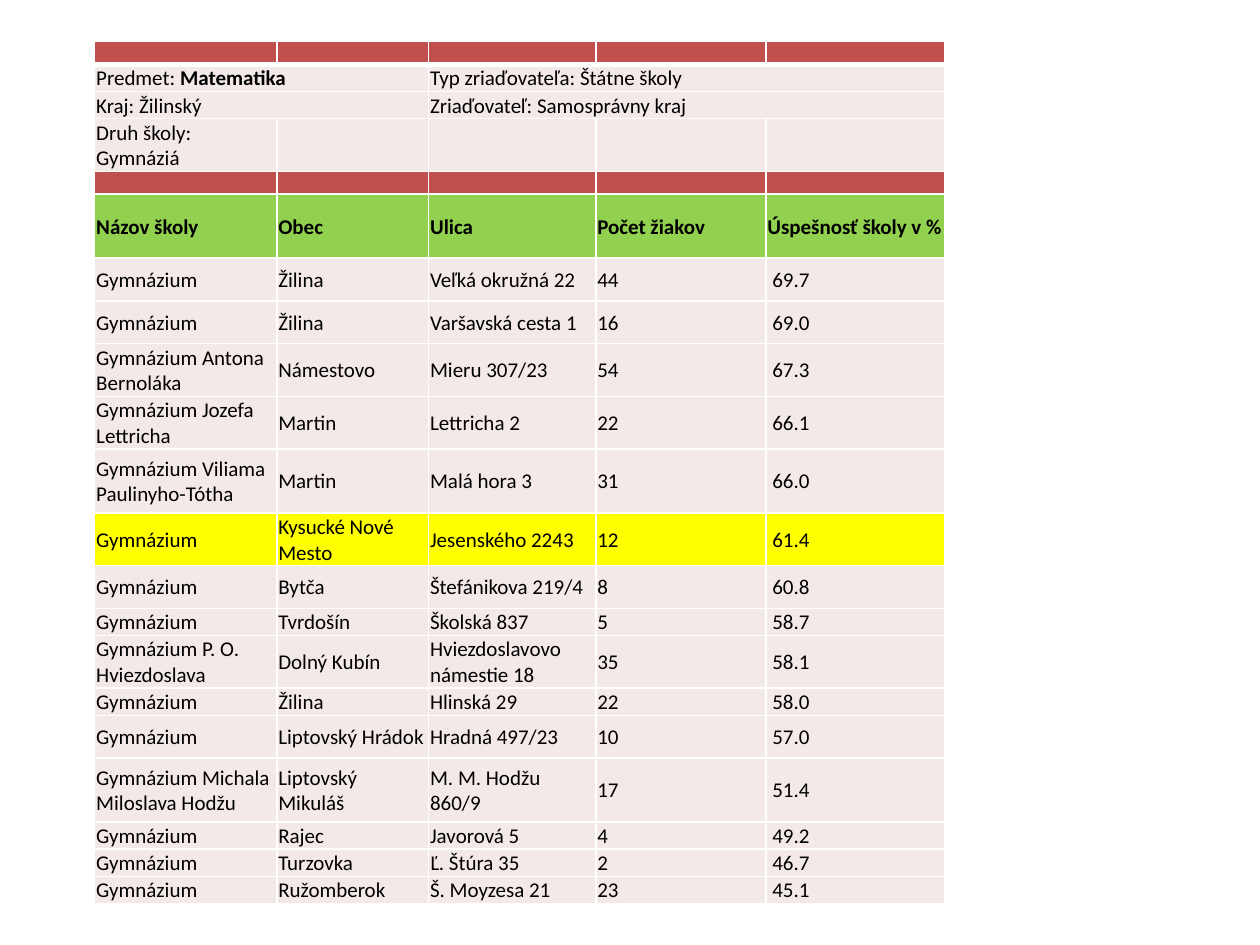
from lxml import etree
from pptx import Presentation
from pptx.dml.color import RGBColor
from pptx.enum.text import MSO_ANCHOR
from pptx.oxml.ns import qn
from pptx.util import Cm, Pt

TOP, MID, LOW = MSO_ANCHOR.TOP, MSO_ANCHOR.MIDDLE, MSO_ANCHOR.BOTTOM
RED = RGBColor(0xC0, 0x50, 0x4D)
PINK = RGBColor(0xF4, 0xE9, 0xE9)
GREEN = RGBColor(0x92, 0xD0, 0x50)
YELLOW = RGBColor(0xFF, 0xFF, 0x00)
WHITE = RGBColor(0xFF, 0xFF, 0xFF)
BLACK = RGBColor(0x00, 0x00, 0x00)

FONT = {"name": "Calibri", "size": Pt(12), "bold": False}
PAD = {"margin_left": Cm(0.03), "margin_top": Cm(0.03),
       "margin_right": Cm(0.03), "margin_bottom": 0}
RATE_PAD = {"margin_left": Cm(0.13)}

# Row heights are multiples of one text line
LINE = 0.43
BOX = (1.91, 0.84, 17.14)
COLS = (3.67, 3.06, 3.37, 3.43, 3.61)

HEAD = ("Názov školy", "Obec", "Ulica", "Počet žiakov", "Úspešnosť školy v %")
# Lines in the row, then the cells
SCHOOLS = (
    (2, "Gymnázium", "Žilina", "Veľká okružná 22", "44", "69.7"),
    (2, "Gymnázium", "Žilina", "Varšavská cesta 1", "16", "69.0"),
    (2, "Gymnázium Antona Bernoláka", "Námestovo", "Mieru 307/23", "54", "67.3"),
    (2, "Gymnázium Jozefa Lettricha", "Martin", "Lettricha 2", "22", "66.1"),
    (3, "Gymnázium Viliama Paulinyho-Tótha", "Martin", "Malá hora 3", "31", "66.0"),
    (2, "Gymnázium", "Kysucké Nové Mesto", "Jesenského 2243", "12", "61.4"),
    (2, "Gymnázium", "Bytča", "Štefánikova 219/4", "8", "60.8"),
    (1, "Gymnázium", "Tvrdošín", "Školská 837", "5", "58.7"),
    (2, "Gymnázium P. O. Hviezdoslava", "Dolný Kubín",
     "Hviezdoslavovo námestie 18", "35", "58.1"),
    (1, "Gymnázium", "Žilina", "Hlinská 29", "22", "58.0"),
    (2, "Gymnázium", "Liptovský Hrádok", "Hradná 497/23", "10", "57.0"),
    (3, "Gymnázium Michala Miloslava Hodžu", "Liptovský Mikuláš",
     "M. M. Hodžu 860/9", "17", "51.4"),
    (1, "Gymnázium", "Rajec", "Javorová 5", "4", "49.2"),
    (1, "Gymnázium", "Turzovka", "Ľ. Štúra 35", "2", "46.7"),
    (1, "Gymnázium", "Ružomberok", "Š. Moyzesa 21", "23", "45.1"),
)
MARKED = "Kysucké Nové Mesto"
HEAD_ROW = 5
LINES = (1,) * HEAD_ROW + (3,) + tuple(row[0] for row in SCHOOLS)


def style(item, *formats):
    for values in formats:
        for key, value in values.items():
            setattr(item, key, value)


def write(cell, text, anchor=MID, bold=False):
    cell.vertical_anchor = anchor
    run = cell.text_frame.paragraphs[0].add_run()
    run.text = text
    style(run.font, FONT, {"bold": bold})
    run.font.color.rgb = BLACK


def edge(cell, **widths):
    props = cell._tc.get_or_add_tcPr()
    for side in "LRTB":
        line = etree.SubElement(props, qn("a:ln" + side),
                                w=str(Pt(widths.get(side, 1))))
        fill = etree.SubElement(line, qn("a:solidFill"))
        etree.SubElement(fill, qn("a:srgbClr"), val=str(WHITE))


def paint(cell, color):
    cell.fill.solid()
    cell.fill.fore_color.rgb = color


def grid(slide, left, top, width):
    """Add the table with white rules and pink cells."""
    table = slide.shapes.add_table(
        len(LINES), len(COLS), Cm(left), Cm(top), Cm(width),
        Cm(LINE * sum(LINES))).table
    for col, size in zip(table.columns, COLS):
        col.width = Cm(size)
    for i, (row, count) in enumerate(zip(table.rows, LINES)):
        row.height = Cm(LINE * count)
        for cell in row.cells:
            style(cell, PAD)
            edge(cell, T=3 if i == 1 else 1, B=3 if i == 0 else 1)
            paint(cell, PINK)
            # Small end marks keep empty cells within one line
            mark = cell.text_frame.paragraphs[0]._p.get_or_add_endParaRPr()
            mark.set("sz", "1000")
    return table


def details(table):
    """Fill the block between the two red bands."""
    for row in (0, HEAD_ROW - 1):
        for col in range(len(COLS)):
            paint(table.cell(row, col), RED)
    for row in (1, 2):
        table.cell(row, 0).merge(table.cell(row, 1))
        table.cell(row, 2).merge(table.cell(row, 4))
    topic = table.cell(1, 0)
    write(topic, "Predmet: ", TOP)
    write(topic, "Matematika", TOP, bold=True)
    write(table.cell(1, 2), "Typ zriaďovateľa: Štátne školy", LOW)
    write(table.cell(2, 0), "Kraj: Žilinský", TOP)
    write(table.cell(2, 2), "Zriaďovateľ: Samosprávny kraj", LOW)
    write(table.cell(3, 0), "Druh školy: Gymnáziá", TOP)


def schools(table):
    """Fill the heading row and the ranked schools."""
    for col, text in enumerate(HEAD):
        cell = table.cell(HEAD_ROW, col)
        paint(cell, GREEN)
        write(cell, text, bold=True)
    for row, (_, *texts) in enumerate(SCHOOLS, HEAD_ROW + 1):
        for col, text in enumerate(texts):
            cell = table.cell(row, col)
            write(cell, text)
            if MARKED in texts:
                paint(cell, YELLOW)
        style(table.cell(row, len(COLS) - 1), RATE_PAD)


def main():
    deck = Presentation()
    style(deck, {"slide_width": Cm(25.4), "slide_height": Cm(19.05)})
    slide = deck.slides.add_slide(deck.slide_layouts[6])
    table = grid(slide, *BOX)
    details(table)
    schools(table)
    deck.save("out.pptx")


if __name__ == "__main__":
    main()
